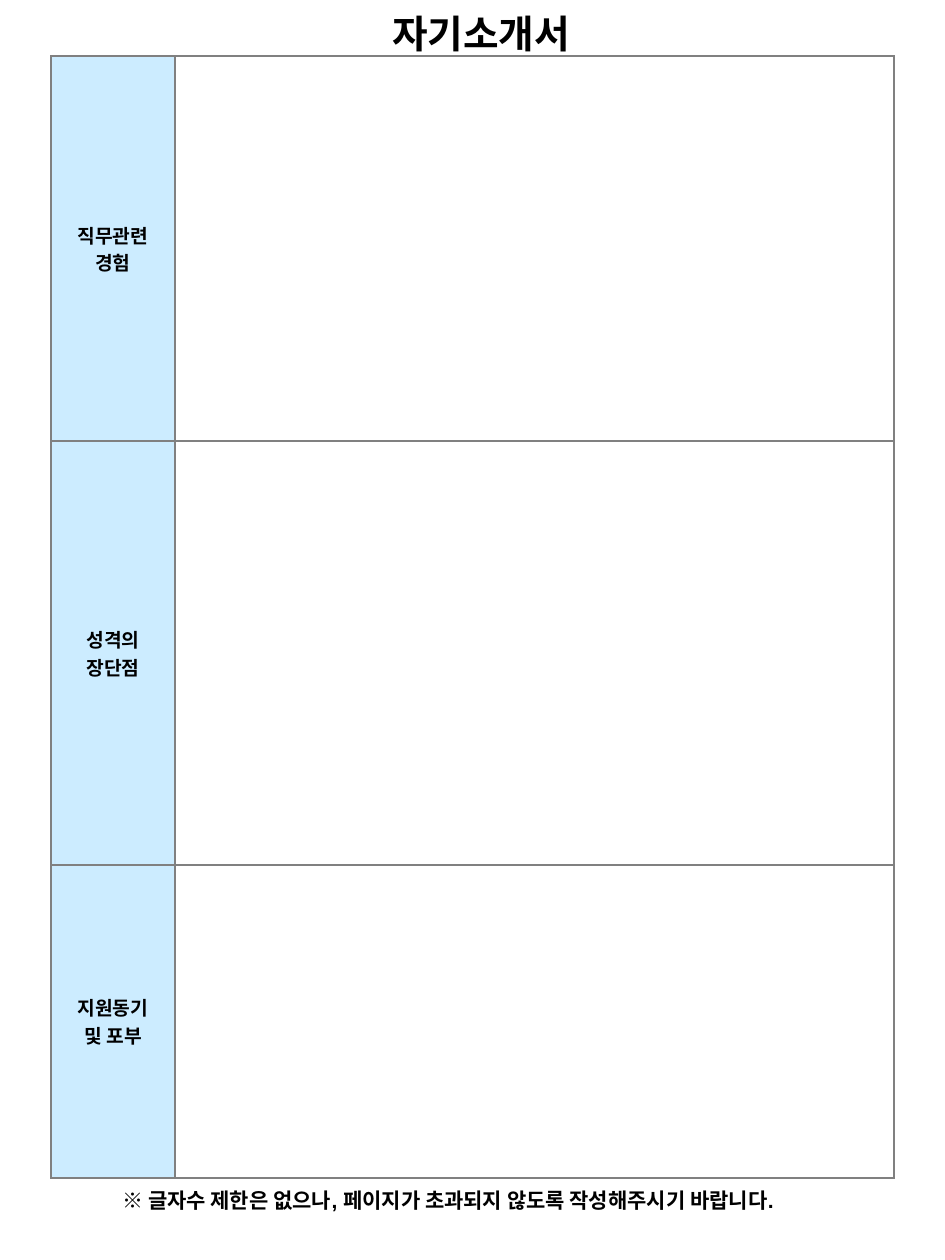
import pptx
import pptx.dml.color
import pptx.enum.text
import pptx.oxml
import pptx.oxml.ns
import pptx.util

ALIGN = pptx.enum.text.PP_ALIGN
MID = pptx.enum.text.MSO_ANCHOR.MIDDLE
SCALE = 914400 // 126
SPACE = pptx.oxml.ns.nsdecls("a")


def px(*vals):
    return [pptx.util.Emu(val * SCALE) for val in vals]


def color(code):
    return pptx.dml.color.RGBColor.from_string(code)


class Form:
    """Holds the style and the current slide of the form."""

    font = "Noto Sans CJK KR"
    ink, tint, edge = "000000", "CCECFF", "808080"

    def __init__(self, deck):
        self.slide = deck.slides.add_slide(deck.slide_layouts[5])

    def label(self, frame, text, size, align, name=font, lead=None):
        frame.text = text
        for para in frame.paragraphs:
            para.alignment = align
            if lead:
                para.line_spacing = pptx.util.Pt(lead)
            for run in para.runs:
                run.font.size = pptx.util.Pt(size)
                run.font.bold = True
                run.font.name = name
                run.font.color.rgb = color(self.ink)
                run._r.get_or_add_rPr().append(
                    pptx.oxml.parse_xml(f'<a:ea {SPACE} typeface="{self.font}"/>'))

    def title(self, text, *box):
        shape = self.slide.shapes.title
        shape.left, shape.top, shape.width, shape.height = px(*box)
        frame = shape.text_frame
        frame.auto_size = pptx.enum.text.MSO_AUTO_SIZE.NONE
        frame.vertical_anchor = MID
        self.label(frame, text, 22.1, ALIGN.CENTER)

    def note(self, text, *box):
        frame = self.slide.shapes.add_textbox(*px(*box)).text_frame
        frame.word_wrap = True
        self.label(frame, text, 12, ALIGN.LEFT, "Arial")

    def border(self, cell):
        props = cell._tc.get_or_add_tcPr()
        for spot, side in enumerate("LRTB"):
            props.insert(spot, pptx.oxml.parse_xml(
                f'<a:ln{side} {SPACE} w="12700"><a:solidFill>'
                f'<a:srgbClr val="{self.edge}"/></a:solidFill></a:ln{side}>'))

    def table(self, heads, left, top, cols, rows):
        box = px(left, top, sum(cols), sum(rows))
        grid = self.slide.shapes.add_table(len(rows), len(cols), *box).table
        grid.first_row = grid.horz_banding = False
        for col, width in zip(grid.columns, px(*cols)):
            col.width = width
        for row, height, text in zip(grid.rows, px(*rows), heads):
            row.height = height
            head, blank = row.cells
            head.fill.solid()
            head.fill.fore_color.rgb = color(self.tint)
            head.vertical_anchor = MID
            self.label(head.text_frame, text, 11, ALIGN.CENTER, lead=16)
            blank.fill.background()
            for cell in row.cells:
                self.border(cell)


def main():
    deck = pptx.Presentation()
    deck.slide_width, deck.slide_height = px(945, 1260)
    form = Form(deck)
    form.title("자기소개서", 69, 4, 824, 59)
    heads = ["직무관련\n경험", "성격의\n장단점", "지원동기\n및 포부"]
    form.table(heads, 51, 56, [124, 719], [385, 424, 313])
    form.note("※ 글자수 제한은 없으나, 페이지가 초과되지 않도록 작성해주시기 바랍니다.",
              110, 1181, 745, 38)
    deck.save("out.pptx")


if __name__ == "__main__":
    main()
